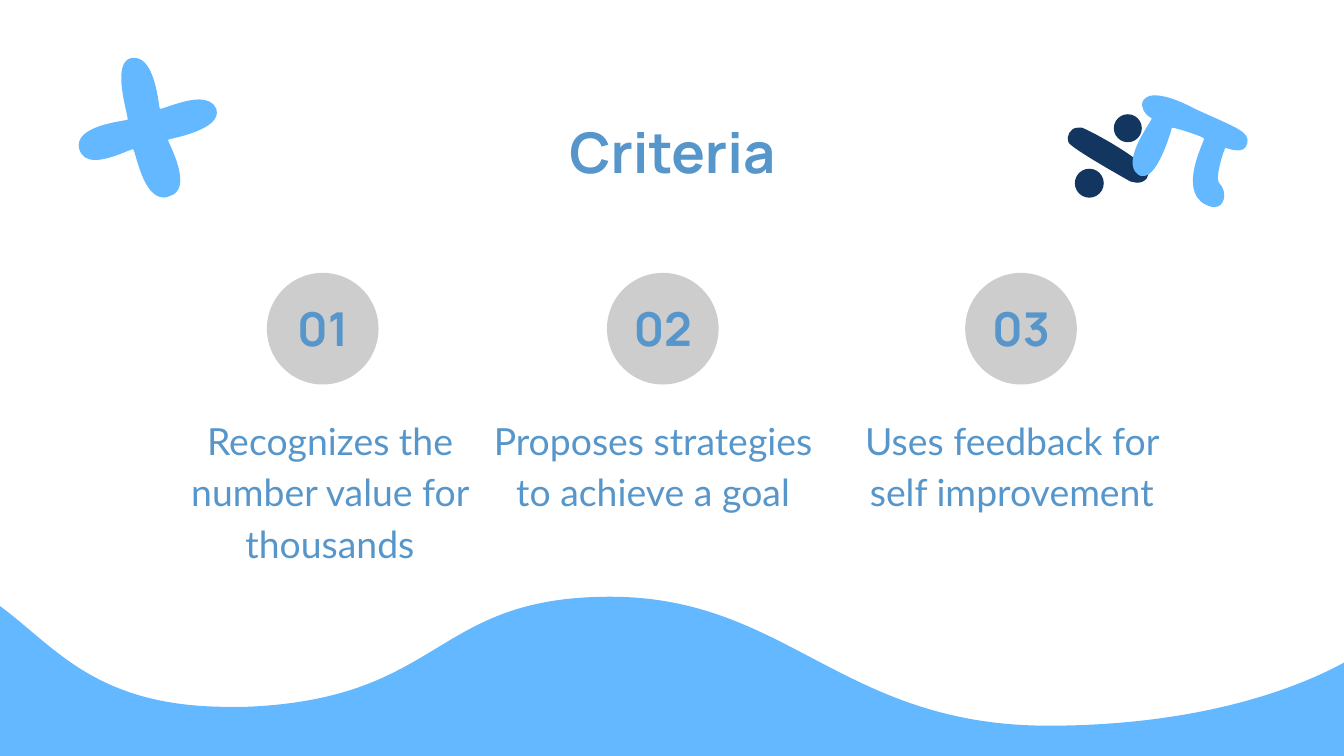
"""Build the criteria slide with three numbered columns and maths ornaments."""
from dataclasses import dataclass

from lxml.etree import SubElement
from pptx import Presentation
from pptx.dml.color import RGBColor
from pptx.enum.shapes import MSO_SHAPE as Preset
from pptx.enum.text import MSO_ANCHOR as Anchor, MSO_AUTO_SIZE as AutoSize, PP_ALIGN as Align
from pptx.oxml.ns import qn
from pptx.shapes.autoshape import Shape
from pptx.slide import Slide
from pptx.util import Pt

SKY, NAVY, GREY, TEXT_BLUE = "63B8FF", "133660", "CDCDCD", "5696CB"
BADGE_TOP, BADGE_SIZE = 146.2, 59.8
NUMBER_TOP, NUMBER_WIDTH, NUMBER_HEIGHT = 156.4, 60.5, 38.9
CAPTION_TOP = 220.4

Point = tuple[float, float]
Curve = tuple[float, float, float, float, float, float]


@dataclass(frozen=True)
class Criterion:
    number: str
    caption: str
    badge_left: float
    caption_left: float
    caption_width: float
    caption_height: float
    indent: float


@dataclass(frozen=True)
class Outline:
    color: str
    start: Point
    curves: list[Curve]
    corners: tuple[Point, ...] = ()


@dataclass(frozen=True)
class Dot:
    left: float
    top: float
    size: float
    color: str


CRITERIA = [
    Criterion("01", "Recognizes the number value for thousands", 143, 95.8, 162, 105, 0),
    Criterion("02", "Proposes strategies to achieve a goal", 325.2, 226.8, 210.2, 44.6, 36),
    Criterion("03", "Uses feedback for self improvement", 517.1, 419, 210.2, 44.6, 36),
]

WAVE = Outline(SKY, (720, 355), [
    (699.1, 366.5, 648.7, 388.1, 565.2, 388.8),
    (563.8, 388.8, 562.3, 388.8, 561.6, 388.8),
    (450.7, 388.8, 421.9, 319.7, 326.9, 319.7),
    (231.1, 319.7, 238.3, 374.4, 131.8, 378.7),
    (128.2, 378.7, 125.3, 378.7, 122.4, 378.7),
    (51.1, 378.7, 29.5, 346.3, 0, 324.7),
], ((0, 405), (720, 405)))

DIVISION_BAR = Outline(NAVY, (577.4, 68.4), [
    (573.1, 68.4, 571, 73.4, 572.4, 76.3),
    (574.6, 79.9, 600.5, 94.3, 605.5, 97.2),
    (606.2, 97.2, 607.7, 97.9, 609.1, 97.9),
    (613.4, 97.9, 617, 94.3, 614.2, 90.7),
    (609.8, 84.2, 585.4, 70.6, 579.6, 68.4),
    (578.9, 68.4, 578.2, 68.4, 577.4, 68.4),
])

PLUS = Outline(SKY, (72, 31), [
    (71.3, 31, 70.6, 31, 70.6, 31),
    (59, 33.1, 69.1, 62.6, 68.4, 64.1),
    (67.7, 64.8, 38.9, 67, 42.5, 79.9),
    (43.9, 84.2, 46.8, 85.7, 51.1, 85.7),
    (59, 85.7, 69.8, 79.9, 71.3, 79.9),
    (72.7, 80.6, 76.3, 105.8, 87.8, 105.8),
    (88.6, 105.8, 89.3, 105.8, 90.7, 105.1),
    (104.4, 101.5, 90, 76.3, 90, 74.9),
    (90.7, 74.2, 119.5, 69.8, 115.9, 58.3),
    (114.5, 54.7, 110.9, 53.3, 106.6, 53.3),
    (98.6, 53.3, 87.8, 58.3, 85.7, 58.3),
    (85, 57.6, 83.5, 31, 72, 31),
])

PI = Outline(SKY, (618.5, 51.1), [
    (614.2, 51.1, 612.7, 53.3, 612, 54.7),
    (611.3, 56.9, 612.7, 61.2, 617, 63.4),
    (617.8, 64.1, 599.8, 86.4, 609.8, 93.6),
    (610.6, 94.3, 611.3, 94.3, 612.7, 94.3),
    (620.6, 94.3, 627.8, 69.1, 627.8, 68.4),
    (630, 68.4, 645.1, 73.4, 645.1, 74.2),
    (645.8, 74.9, 628.6, 105.8, 649.4, 110.9),
    (650.2, 110.9, 650.2, 110.9, 650.9, 110.9),
    (655.9, 110.9, 658.1, 103, 653, 97.9),
    (650.9, 95, 655.9, 79.2, 656.6, 79.2),
    (656.6, 79.2, 660.2, 80.6, 663.1, 80.6),
    (665.3, 80.6, 667.4, 79.9, 668.2, 77),
    (669.6, 70.6, 663.8, 69.1, 640.1, 58.3),
    (629.3, 52.6, 622.8, 51.1, 618.5, 51.1),
])

DIVISION_DOTS = [Dot(575.8, 90.4, 15.5, NAVY), Dot(596.7, 61.2, 15, NAVY)]


def rgb(color: str) -> RGBColor:
    return RGBColor.from_string(color)


def paint(shape: Shape, color: str) -> None:
    shape.shadow.inherit = False
    shape.fill.solid()
    shape.fill.fore_color.rgb = rgb(color)
    shape.line.fill.background()


def bend(shape: Shape, curve_count: int) -> None:
    lines = list(shape._element.iter(qn("a:lnTo")))
    for first in range(0, 3 * curve_count, 3):
        group = lines[first:first + 3]
        parent = group[0].getparent()
        cubic = SubElement(parent, qn("a:cubicBezTo"))
        parent.replace(group[0], cubic)
        for line in group:
            cubic.append(line[0])
        for line in group[1:]:
            parent.remove(line)


def draw_outline(slide: Slide, outline: Outline) -> None:
    handles = [point for curve in outline.curves for point in zip(curve[::2], curve[1::2])]
    start_x, start_y = outline.start
    builder = slide.shapes.build_freeform(Pt(start_x), Pt(start_y))
    builder.add_line_segments([(Pt(x), Pt(y)) for x, y in (*handles, *outline.corners)], close=True)
    shape = builder.convert_to_shape()
    bend(shape, len(outline.curves))
    paint(shape, outline.color)


def draw_dot(slide: Slide, dot: Dot) -> None:
    size = Pt(dot.size)
    paint(slide.shapes.add_shape(Preset.OVAL, Pt(dot.left), Pt(dot.top), size, size), dot.color)


def write(box: Shape, words: str, font: str, size: float, bold: bool, inset: float, anchor: Anchor) -> None:
    frame = box.text_frame
    frame.text = words
    frame.word_wrap = True
    frame.auto_size = AutoSize.NONE
    frame.vertical_anchor = anchor
    frame.margin_left = frame.margin_right = frame.margin_top = frame.margin_bottom = Pt(inset)
    paragraph = frame.paragraphs[0]
    paragraph.alignment = Align.CENTER
    style = paragraph.runs[0].font
    style.name, style.size, style.bold = font, Pt(size), bold
    style.color.rgb = rgb(TEXT_BLUE)


def draw_criterion(slide: Slide, item: Criterion) -> None:
    draw_dot(slide, Dot(item.badge_left, BADGE_TOP, BADGE_SIZE, GREY))
    number_left = item.badge_left + (BADGE_SIZE - NUMBER_WIDTH) / 2
    number = slide.shapes.add_textbox(Pt(number_left), Pt(NUMBER_TOP), Pt(NUMBER_WIDTH), Pt(NUMBER_HEIGHT))
    write(number, item.number, "Manrope", 25, True, 7.2, Anchor.MIDDLE)
    caption = slide.shapes.add_textbox(
        Pt(item.caption_left), Pt(CAPTION_TOP), Pt(item.caption_width), Pt(item.caption_height))
    write(caption, item.caption, "Lato", 20, False, 0, Anchor.TOP)
    paragraph = caption.text_frame.paragraphs[0]
    paragraph.line_spacing = 1.15
    properties = paragraph._p.get_or_add_pPr()
    properties.set("marL", str(Pt(item.indent)))
    properties.set("indent", "0")


def main() -> None:
    deck = Presentation()
    deck.slide_width, deck.slide_height = Pt(720), Pt(405)
    slide = deck.slides.add_slide(deck.slide_layouts[5])
    title = slide.shapes.title
    title.left, title.top, title.width, title.height = Pt(56.7), Pt(67), Pt(607), Pt(27.4)
    write(title, "Criteria", "Manrope", 30, True, 7.2, Anchor.MIDDLE)
    draw_outline(slide, WAVE)
    for item in CRITERIA:
        draw_criterion(slide, item)
    for dot in DIVISION_DOTS:
        draw_dot(slide, dot)
    for outline in (DIVISION_BAR, PLUS, PI):
        draw_outline(slide, outline)
    deck.save("out.pptx")


if __name__ == "__main__":
    main()
